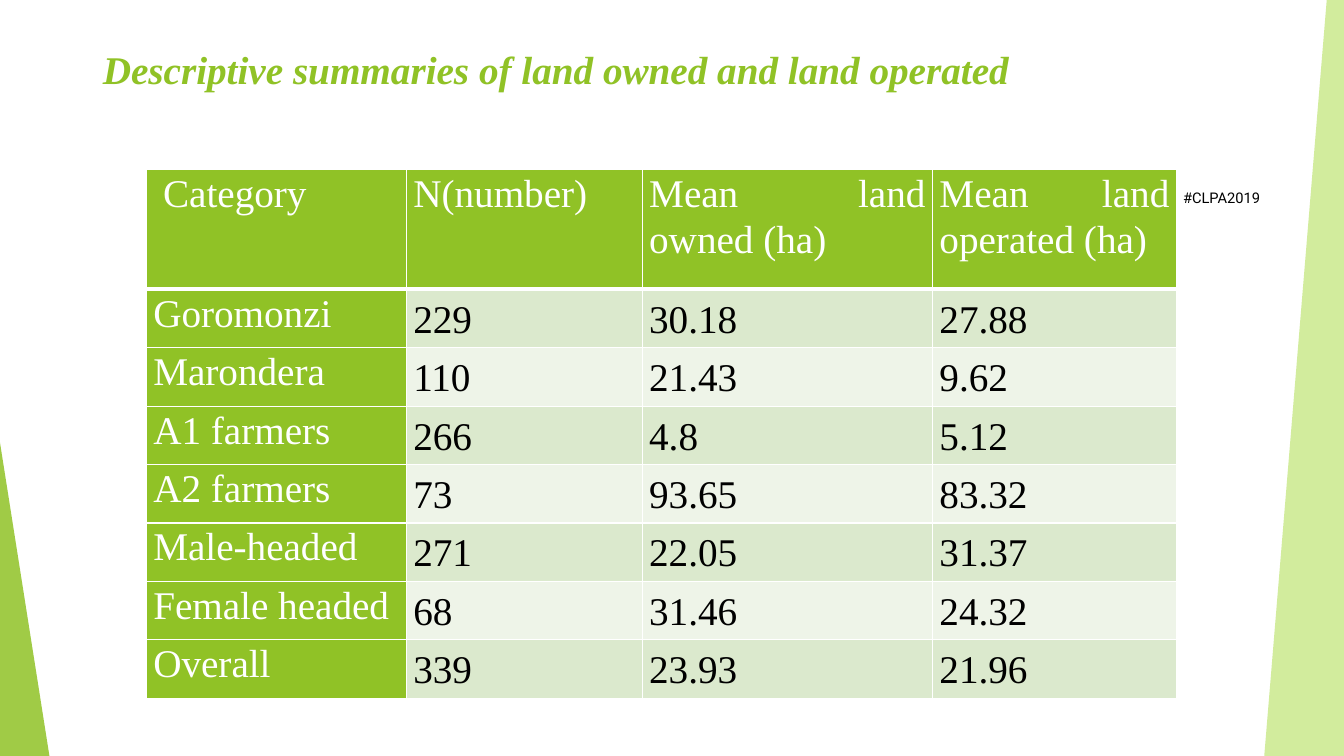
from lxml.etree import SubElement
from pptx import Presentation
from pptx.dml.color import RGBColor
from pptx.enum.shapes import MSO_SHAPE as Preset
from pptx.enum.text import MSO_ANCHOR as Anchor, MSO_AUTO_SIZE as AutoSize, PP_ALIGN as Align
from pptx.oxml.ns import qn
from pptx.util import Inches, Pt

GREEN, PALE_GREEN, WHITE, BLACK = "90C226", "C0E474", "FFFFFF", "000000"
BANDS = ("DBE9CD", "EEF4E8")
COLUMN_WIDTHS = (19.35, 17.55, 21.6, 18.15)
HEADER_HEIGHT, ROW_HEIGHT = 15.87, 7.73
LAND_ROWS = [
    (" Category", "N(number)", "Mean land owned (ha)", "Mean land operated (ha)"),
    ("Goromonzi", "229", "30.18", "27.88"),
    ("Marondera", "110", "21.43", "9.62"),
    ("A1 farmers", "266", "4.8", "5.12"),
    ("A2 farmers", "73", "93.65", "83.32"),
    ("Male-headed", "271", "22.05", "31.37"),
    ("Female headed", "68", "31.46", "24.32"),
    ("Overall", "339", "23.93", "21.96"),
]


def color(value):
    return RGBColor.from_string(value)


class Slide:
    serif, sans, size = "Times New Roman", "Roboto", 28

    def __init__(self, deck):
        self.deck = deck
        self.page = deck.slides.add_slide(deck.slide_layouts[5])

    def across(self, share):
        return round(self.deck.slide_width * share / 100)

    def down(self, share):
        return round(self.deck.slide_height * share / 100)

    def area(self, left, top, width, height):
        return self.across(left), self.down(top), self.across(width), self.down(height)

    def style(self, para, hue, font=None, size=None, bold=False, italic=False):
        for span in para.runs:
            span.font.name = font or self.serif
            span.font.size = Pt(size or self.size)
            span.font.color.rgb = color(hue)
            span.font.bold = bold
            span.font.italic = italic

    def paint(self, shape, hue, opacity):
        shape.shadow.inherit = False
        shape.line.fill.background()
        shape.fill.solid()
        shape.fill.fore_color.rgb = color(hue)
        tint = shape.fill._xPr.find(qn("a:solidFill"))[0]
        SubElement(tint, qn("a:alpha")).set("val", str(opacity * 1000))

    def outline(self, points, hue, opacity):
        corners = [(self.across(x), self.down(y)) for x, y in points]
        builder = self.page.shapes.build_freeform(*corners[0])
        builder.add_line_segments(corners[1:], close=True)
        self.paint(builder.convert_to_shape(), hue, opacity)

    def wedge(self, area, hue, opacity):
        shape = self.page.shapes.add_shape(Preset.ISOSCELES_TRIANGLE, *self.area(*area))
        shape.adjustments[0] = 0
        self.paint(shape, hue, opacity)

    def title(self, area, text):
        box = self.page.shapes.title
        box.left, box.top, box.width, box.height = self.area(*area)
        frame = box.text_frame
        frame.text = text
        frame.auto_size = AutoSize.NONE
        frame.vertical_anchor = Anchor.TOP
        frame.paragraphs[0].alignment = Align.LEFT
        self.style(frame.paragraphs[0], GREEN, bold=True, italic=True)

    def label(self, area, text, size):
        box = self.page.shapes.add_textbox(*self.area(*area))
        frame = box.text_frame
        frame.text = text
        frame.word_wrap = True
        self.style(frame.paragraphs[0], BLACK, self.sans, size)

    def border(self, cell, side, points):
        line = SubElement(cell._tc.get_or_add_tcPr(), qn(f"a:ln{side}"), w=str(Pt(points)))
        fill = SubElement(line, qn("a:solidFill"))
        SubElement(fill, qn("a:srgbClr")).set("val", WHITE)

    def cell(self, cell, text, is_header, is_label, band):
        for side in "LRTB":
            self.border(cell, side, 3 if is_header and side == "B" else 1)
        colored = is_header or is_label
        cell.fill.solid()
        cell.fill.fore_color.rgb = color(GREEN if colored else band)
        cell.margin_left = cell.margin_right = Inches(0.07)
        cell.margin_top = cell.margin_bottom = 0
        cell.vertical_anchor = Anchor.TOP if colored else Anchor.MIDDLE
        cell.text_frame.text = text
        para = cell.text_frame.paragraphs[0]
        para.alignment = Align.JUSTIFY
        para.line_spacing = 1.07
        self.style(para, WHITE if colored else BLACK)

    def table(self, left, top, widths, heights, rows):
        area = self.area(left, top, sum(widths), sum(heights))
        table = self.page.shapes.add_table(len(rows), len(widths), *area).table
        for column, width in zip(table.columns, widths):
            column.width = self.across(width)
        for row, height in zip(table.rows, heights):
            row.height = self.down(height)
        for r, texts in enumerate(rows):
            for c, text in enumerate(texts):
                self.cell(table.cell(r, c), text, r == 0, c == 0, BANDS[(r - 1) % 2])


def main():
    deck = Presentation()
    deck.slide_width, deck.slide_height = Inches(13.33), Inches(7.5)
    slide = Slide(deck)
    slide.outline([(98.72, 0), (100, 0), (100, 100), (94.07, 100)], PALE_GREEN, 70)
    slide.wedge((0, 58.53, 3.68, 41.47), GREEN, 85)
    slide.label((87.02, 24.27, 10.05, 3.73), " #CLPA2019", 10.5)
    slide.title((6.9, 5.33, 86.27, 14.93), "Descriptive summaries of land owned and land operated")
    heights = [HEADER_HEIGHT] + [ROW_HEIGHT] * (len(LAND_ROWS) - 1)
    slide.table(10.88, 22.4, COLUMN_WIDTHS, heights, LAND_ROWS)
    deck.save("out.pptx")


if __name__ == "__main__":
    main()
